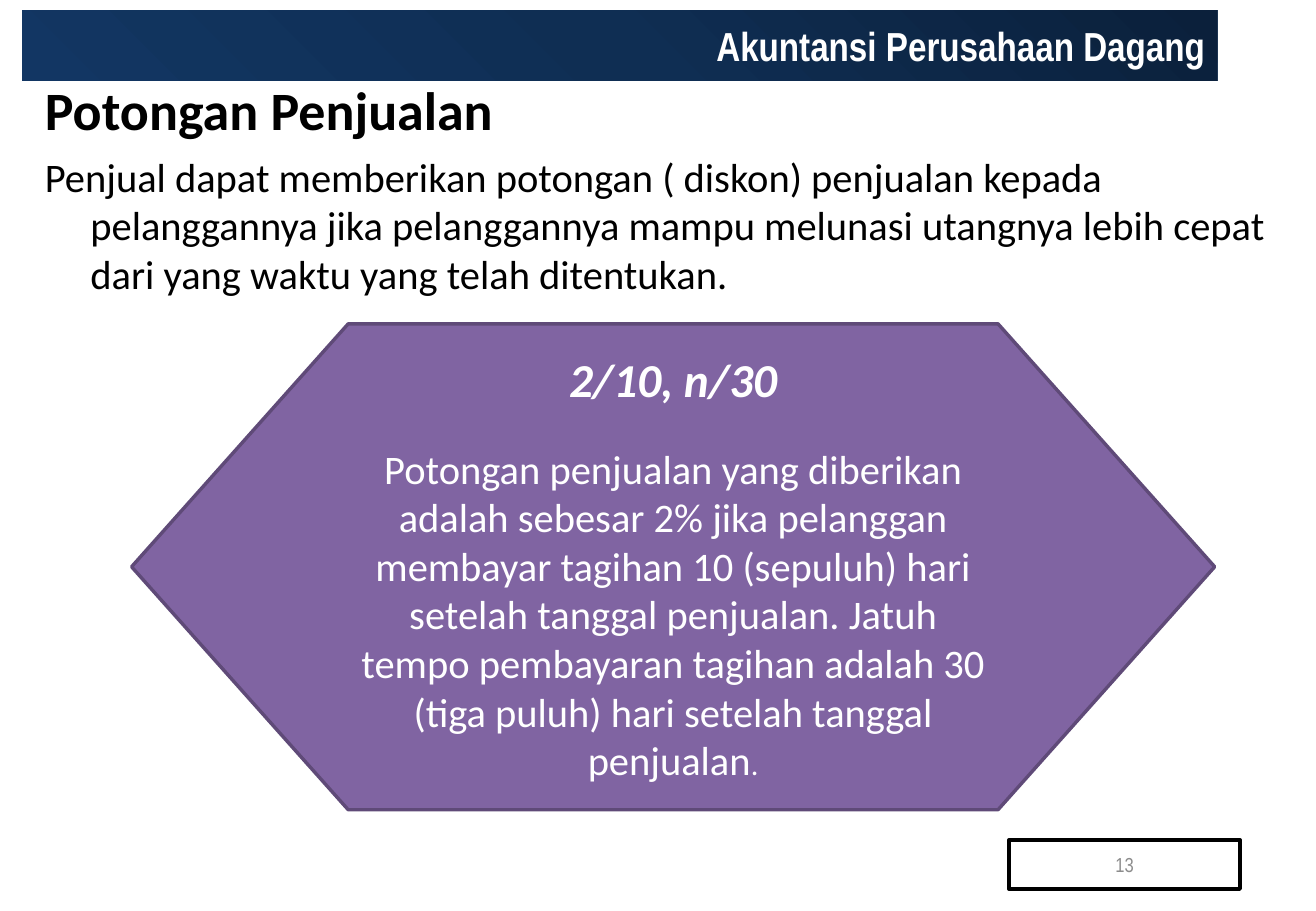
from pptx import Presentation
from pptx.dml.color import RGBColor
from pptx.enum.shapes import MSO_SHAPE
from pptx.enum.text import MSO_ANCHOR, PP_ALIGN
from pptx.oxml import parse_xml
from pptx.oxml.ns import nsdecls, qn
from pptx.util import Pt

WHITE = RGBColor(0xFF, 0xFF, 0xFF)
BLACK = RGBColor(0, 0, 0)
GREY = RGBColor(0x8C, 0x8C, 0x8C)
PURPLE = RGBColor(0x80, 0x64, 0xA2)
DARK_PURPLE = RGBColor(0x5F, 0x4A, 0x78)
BANNER_STOPS = [
    (0, RGBColor(0x0B, 0x20, 0x3B)),
    (50, RGBColor(0x0F, 0x2E, 0x53)),
    (100, RGBColor(0x12, 0x36, 0x63)),
]
HEADING_FONT = "Arial Narrow"
BODY_FONT = "Calibri"


def format_font(font, name, size, color, bold=False, italic=False):
    font.name, font.size = name, Pt(size)
    font.bold, font.italic = bold, italic
    font.color.rgb = color


def add_panel(page, kind, box, line=None, line_width=0):
    """Add an unfilled, shadowless shape with wrapped, centred text."""
    panel = page.shapes.add_shape(kind, *map(Pt, box))
    panel.shadow.inherit = False
    panel.fill.background()
    if line is None:
        panel.line.fill.background()
    else:
        panel.line.color.rgb = line
        panel.line.width = Pt(line_width)
    panel.text_frame.word_wrap = True
    panel.text_frame.vertical_anchor = MSO_ANCHOR.MIDDLE
    return panel


def add_banner(page, box):
    banner = add_panel(page, MSO_SHAPE.RECTANGLE, box)
    # Radial gradient spreading from the top right corner
    banner.fill.gradient()
    stops = "".join(
        f'<a:gs pos="{place * 1000}"><a:srgbClr val="{color}"/></a:gs>'
        for place, color in BANNER_STOPS
    )
    radial = parse_xml(
        f'<a:gradFill {nsdecls("a")} rotWithShape="1"><a:gsLst>{stops}</a:gsLst>'
        '<a:path path="circle"><a:fillToRect l="100000" b="100000"/></a:path>'
        "</a:gradFill>"
    )
    properties = banner.element.spPr
    properties.replace(properties.find(qn("a:gradFill")), radial)

    para = banner.text_frame.paragraphs[0]
    para.text = "Akuntansi Perusahaan Dagang"
    para.alignment = PP_ALIGN.RIGHT
    format_font(para.font, HEADING_FONT, 24, WHITE, bold=True)


def add_page_number(page, box):
    number = add_panel(page, MSO_SHAPE.RECTANGLE, box, BLACK, 2.25)
    para = number.text_frame.paragraphs[0]
    para.text = "13"
    para.alignment = PP_ALIGN.CENTER
    format_font(para.font, HEADING_FONT, 12, GREY)


def add_explanation(page, box):
    frame = page.shapes.add_textbox(*map(Pt, box)).text_frame
    frame.word_wrap = True
    heading, body = frame.paragraphs[0], frame.add_paragraph()
    heading.text = "Potongan Penjualan"
    body.text = (
        "Penjual dapat memberikan potongan ( diskon) penjualan kepada "
        "pelanggannya jika pelanggannya mampu melunasi utangnya lebih cepat "
        "dari yang waktu yang telah ditentukan."
    )
    # Hanging indent
    for para in (heading, body):
        indent = para._p.get_or_add_pPr()
        indent.set("marL", str(Pt(27)))
        indent.set("indent", str(Pt(-27)))
    body.space_before = Pt(6)
    format_font(heading.font, BODY_FONT, 32, BLACK, bold=True)
    format_font(body.font, BODY_FONT, 24, BLACK)


def add_terms(page, box):
    terms = add_panel(page, MSO_SHAPE.FLOWCHART_PREPARATION, box, DARK_PURPLE, 2)
    terms.fill.solid()
    terms.fill.fore_color.rgb = PURPLE
    frame = terms.text_frame
    code, meaning = frame.paragraphs[0], frame.add_paragraph()
    code.text = "2/10, n/30"
    meaning.text = (
        "Potongan penjualan yang diberikan adalah sebesar 2% jika pelanggan "
        "membayar tagihan 10 (sepuluh) hari setelah tanggal penjualan. Jatuh "
        "tempo pembayaran tagihan adalah 30 (tiga puluh) hari setelah tanggal "
        "penjualan"
    )
    full_stop = meaning.add_run()
    full_stop.text = "."
    for para in (code, meaning):
        para.alignment = PP_ALIGN.CENTER
    meaning.space_before = Pt(22)
    format_font(code.font, BODY_FONT, 28, WHITE, bold=True, italic=True)
    format_font(meaning.font, BODY_FONT, 24, WHITE)
    full_stop.font.size = Pt(18)


def main():
    deck = Presentation()
    deck.slide_width, deck.slide_height = Pt(780), Pt(540)
    page = deck.slides.add_slide(deck.slide_layouts[6])
    add_banner(page, (13, 6, 708.5, 42))
    add_page_number(page, (598, 498, 137, 29))
    add_explanation(page, (19.5, 42, 741, 444))
    add_terms(page, (78, 192, 642, 288))
    deck.save("out.pptx")


if __name__ == "__main__":
    main()
